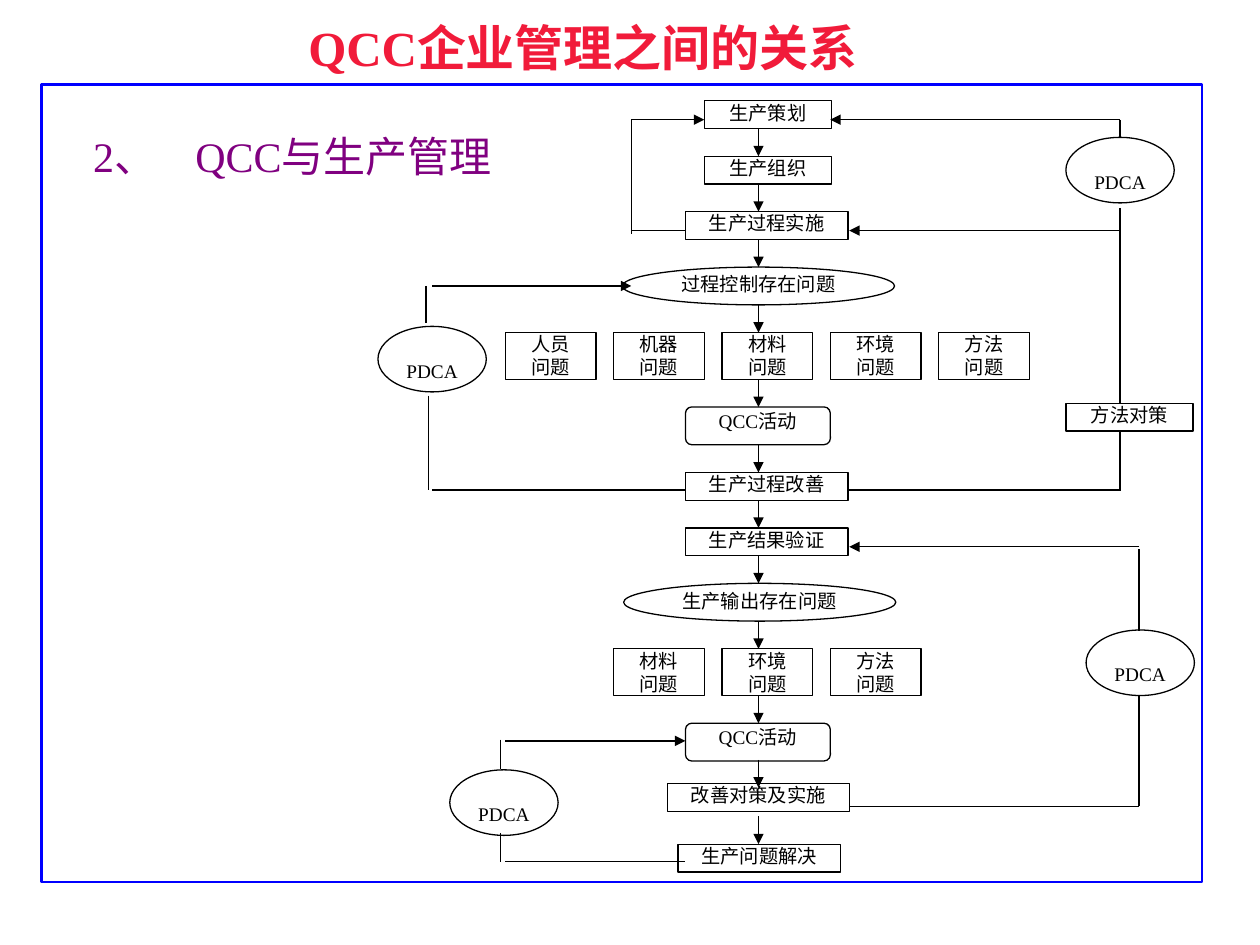
from dataclasses import dataclass
from lxml.etree import SubElement
from pptx import Presentation
from pptx.dml.color import RGBColor
from pptx.enum.shapes import MSO_CONNECTOR, MSO_SHAPE
from pptx.enum.text import MSO_ANCHOR, PP_ALIGN
from pptx.oxml.ns import qn
from pptx.util import Inches, Pt


@dataclass(frozen=True)
class Theme:
    red: str = "F11B3A"
    blue: str = "0000FF"
    plum: str = "800080"
    ink: str = "000000"
    latin: str = "Times New Roman"
    han: str = "Noto Sans CJK SC"
    title: int = 28
    head: int = 24
    body: int = 11
    thin: float = 0.75
    frame: float = 1.5


T = Theme()
RECT, OVAL, ROUND = MSO_SHAPE.RECTANGLE, MSO_SHAPE.OVAL, MSO_SHAPE.ROUNDED_RECTANGLE

# Main column
MID = 6.02
STEP = 0.22
ARROWS = [1.02, 1.46, 1.9, 2.42, 3.01, 3.53, 3.97, 4.41, 4.93, 5.52, 6.03, 6.48]

# Kind, left, top, width, height, text
NODES = [
    (RECT, 5.59, 0.8, 1.01, 0.22, "生产策划"),
    (RECT, 5.59, 1.24, 1.01, 0.22, "生产组织"),
    (RECT, 5.44, 1.68, 1.29, 0.22, "生产过程实施"),
    (OVAL, 4.94, 2.12, 2.16, 0.3, "过程控制存在问题"),
    (ROUND, 5.44, 3.23, 1.15, 0.3, "QCC活动"),
    (RECT, 5.44, 3.75, 1.29, 0.22, "生产过程改善"),
    (RECT, 5.44, 4.19, 1.29, 0.22, "生产结果验证"),
    (OVAL, 4.95, 4.63, 2.16, 0.3, "生产输出存在问题"),
    (ROUND, 5.44, 5.74, 1.15, 0.3, "QCC活动"),
    (RECT, 5.3, 6.22, 1.44, 0.22, "改善对策及实施"),
    (RECT, 5.38, 6.7, 1.29, 0.22, "生产问题解决"),
    (RECT, 8.46, 3.2, 1.01, 0.22, "方法对策"),
]

# Rows of causes: left, top, first words
CAUSES = [
    (4.01, 2.64, ["人员", "机器", "材料", "环境", "方法"]),
    (4.87, 5.15, ["材料", "环境", "方法"]),
]
PITCH = 0.86

# Left and top of each PDCA oval
CYCLES = [(8.46, 1.09), (3, 2.59), (8.62, 5), (3.57, 6.11)]

# Feedback loops: x1, y1, x2, y2
PLAIN = [
    (5.01, 1.83, 5.44, 1.83), (5.01, 0.95, 5.01, 1.86),
    (8.89, 1.09, 8.89, 0.95), (8.89, 1.65, 8.89, 3.2),
    (8.89, 3.43, 8.89, 3.9), (6.74, 3.89, 8.89, 3.89),
    (3.38, 2.27, 3.38, 2.56), (3.4, 3.14, 3.4, 3.89),
    (3.43, 3.89, 5.44, 3.89), (9.04, 4.36, 9.04, 5.01),
    (9.04, 5.52, 9.04, 6.4), (6.74, 6.4, 9.04, 6.4),
    (3.97, 5.87, 3.97, 6.1), (3.97, 6.61, 3.97, 6.84),
    (4.01, 6.84, 5.44, 6.84),
]
HEADED = [
    (5.01, 0.95, 5.59, 0.95), (8.89, 0.95, 6.59, 0.95),
    (8.89, 1.83, 6.74, 1.83), (3.43, 2.27, 5.01, 2.27),
    (9.04, 4.34, 6.74, 4.34), (4.01, 5.88, 5.44, 5.88),
]


def add_run(para, text, size, color, face=T.latin, bold=False):
    run = para.add_run()
    run.text = text
    font = run.font
    font.size, font.bold, font.name = Pt(size), bold, face
    font.color.rgb = RGBColor.from_string(color)
    SubElement(run._r.get_or_add_rPr(), qn("a:ea"), typeface=T.han)


def add_node(slide, kind, x, y, w, h, lines=(), color=T.ink, width=T.thin, gap=None):
    node = slide.shapes.add_shape(kind, Inches(x), Inches(y), Inches(w), Inches(h))
    node.shadow.inherit = False
    node.fill.background()
    node.line.color.rgb = RGBColor.from_string(color)
    node.line.width = Pt(width)
    frame = node.text_frame
    frame.word_wrap = True
    frame.vertical_anchor = MSO_ANCHOR.TOP
    frame.margin_left = frame.margin_right = frame.margin_top = frame.margin_bottom = 0
    for i, text in enumerate(lines):
        para = frame.add_paragraph() if i else frame.paragraphs[0]
        para.alignment = PP_ALIGN.CENTER
        if gap:
            para.line_spacing = gap
        add_run(para, text, T.body, T.ink)


def add_line(slide, x1, y1, x2, y2, head=False):
    line = slide.shapes.add_connector(
        MSO_CONNECTOR.STRAIGHT, Inches(x1), Inches(y1), Inches(x2), Inches(y2))
    line.line.color.rgb = RGBColor.from_string(T.ink)
    line.line.width = Pt(T.thin)
    if head:
        SubElement(line.line._get_or_add_ln(), qn("a:tailEnd"), type="triangle")
    SubElement(line._element.spPr, qn("a:effectLst"))


def add_box(slide, x, y, w, h):
    box = slide.shapes.add_textbox(Inches(x), Inches(y), Inches(w), Inches(h))
    box.text_frame.word_wrap = True
    return box.text_frame


def add_title(slide):
    frame = add_box(slide, 1.67, 0.17, 6, 0.4)
    frame.vertical_anchor = MSO_ANCHOR.MIDDLE
    para = frame.paragraphs[0]
    para.alignment = PP_ALIGN.CENTER
    add_run(para, "QCC", T.title, T.red, bold=True)
    add_run(para, "企业管理之间的关系 ", T.title, T.red, T.han, True)


def add_head(slide):
    frame = add_box(slide, 0.5, 0.99, 4.17, 0.5)
    frame.margin_left = Inches(0.24)
    para = frame.paragraphs[0]
    tabs = SubElement(para._p.get_or_add_pPr(), qn("a:tabLst"))
    SubElement(tabs, qn("a:tab"), pos=str(Inches(0.81)), algn="l")
    add_run(para, "2、\tQCC", T.head, T.plum)
    add_run(para, "与生产管理", T.head, T.plum, T.han)


def main():
    deck = Presentation()
    deck.slide_width, deck.slide_height = Inches(10), Inches(7.5)
    slide = deck.slides.add_slide(deck.slide_layouts[6])

    # Title, frame and heading
    add_title(slide)
    add_node(slide, RECT, 0.33, 0.67, 9.21, 6.33, color=T.blue, width=T.frame)
    add_head(slide)

    # Steps, causes and cycles
    for *place, text in NODES:
        add_node(slide, *place, [text])
    for left, top, words in CAUSES:
        for i, word in enumerate(words):
            add_node(slide, RECT, left + i * PITCH, top, 0.72, 0.37, [word, "问题"])
    for left, top in CYCLES:
        add_node(slide, OVAL, left, top, 0.86, 0.52, ["PDCA"], gap=2.0)

    # Arrows down the column, then feedback loops
    for top in ARROWS:
        add_line(slide, MID, top, MID, top + STEP, True)
    for ends in PLAIN:
        add_line(slide, *ends)
    for ends in HEADED:
        add_line(slide, *ends, True)

    deck.save("out.pptx")


if __name__ == "__main__":
    main()
